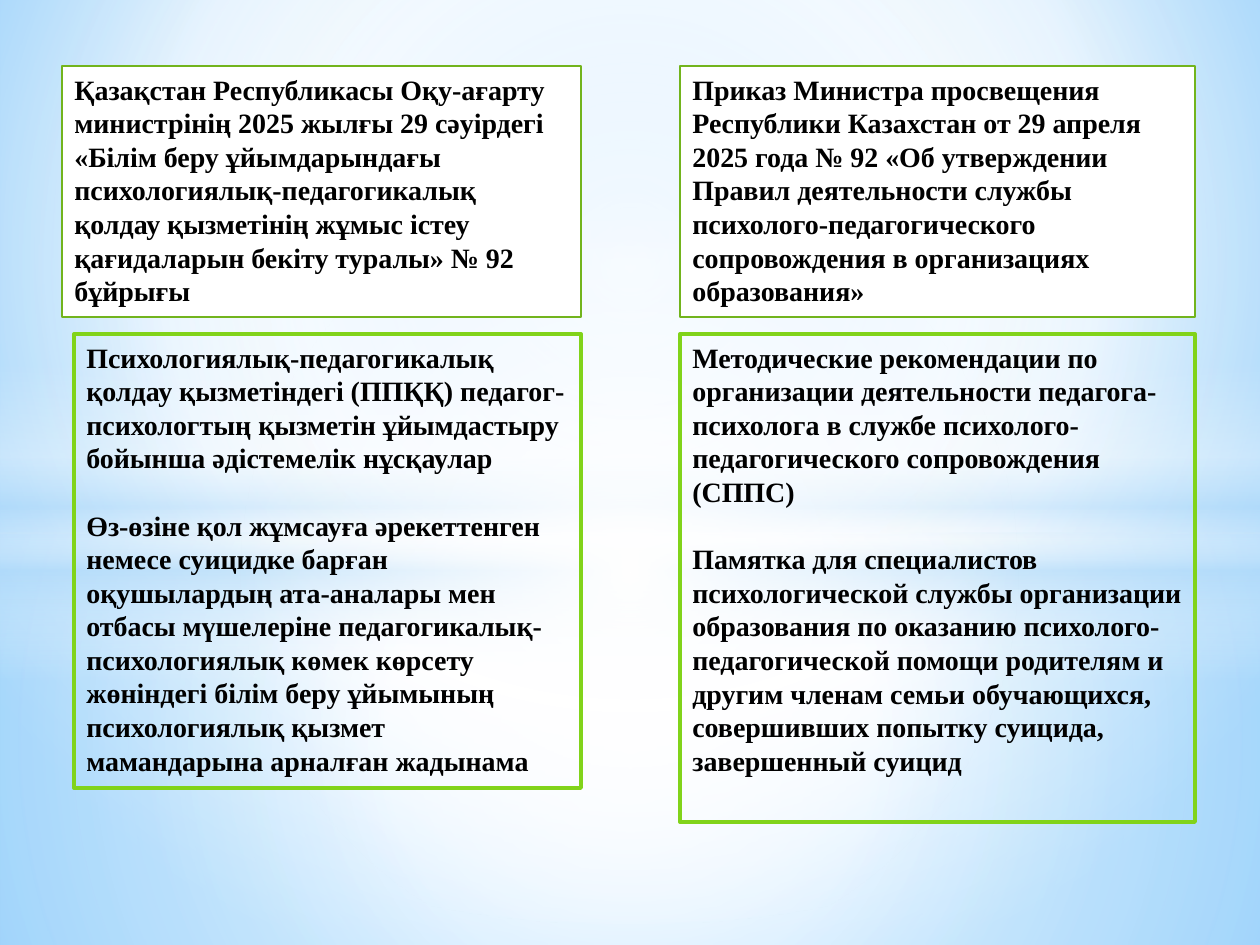
"""Build a bilingual slide of school psychology service regulations and guidance."""
from lxml.etree import SubElement
from pptx import Presentation
from pptx.dml.color import RGBColor
from pptx.enum.shapes import MSO_SHAPE
from pptx.enum.text import MSO_ANCHOR, MSO_AUTO_SIZE, PP_ALIGN
from pptx.oxml.ns import qn
from pptx.util import Emu, Pt

WIDTH, HEIGHT = 1260, 945
EMU_PER_PX = 914400 / 126
BLACK = RGBColor(0x00, 0x00, 0x00)
WHITE = RGBColor(0xFF, 0xFF, 0xFF)
SKY = RGBColor(0x9E, 0xD5, 0xFF)
BLUE = RGBColor(0x5B, 0xB9, 0xFF)
HAZE = RGBColor(0xB4, 0xDC, 0xFA)
GREEN = RGBColor(0x72, 0xB4, 0x1D)
LIME = RGBColor(0x81, 0xD3, 0x1A)
CENTRE = (50, 50, 50, 50)

ORDER_KK = (
    "Қазақстан Республикасы Оқу-ағарту министрінің 2025 жылғы 29 сәуірдегі "
    "«Білім беру ұйымдарындағы психологиялық-педагогикалық қолдау қызметінің "
    "жұмыс істеу қағидаларын бекіту туралы» № 92 бұйрығы",
)
ORDER_RU = (
    "Приказ Министра просвещения Республики Казахстан от 29 апреля 2025 года "
    "№ 92 «Об утверждении Правил деятельности службы психолого-педагогического "
    "сопровождения в организациях образования»",
)
GUIDANCE_KK = (
    "Психологиялық-педагогикалық қолдау қызметіндегі (ППҚҚ) педагог-психологтың "
    "қызметін ұйымдастыру бойынша әдістемелік нұсқаулар",
    "Өз-өзіне қол жұмсауға әрекеттенген немесе суицидке барған оқушылардың "
    "ата-аналары мен отбасы мүшелеріне педагогикалық-психологиялық көмек көрсету "
    "жөніндегі білім беру ұйымының психологиялық қызмет мамандарына арналған жадынама",
)
GUIDANCE_RU = (
    "Методические рекомендации по организации деятельности педагога-психолога "
    "в службе психолого-педагогического сопровождения (СППС)",
    "Памятка для специалистов психологической службы организации образования "
    "по оказанию психолого-педагогической помощи родителям и другим членам семьи "
    "обучающихся, совершивших попытку суицида, завершенный суицид",
)


def px(length):
    """Turn pixels into EMU."""
    return Emu(round(length * EMU_PER_PX))


def write_text(frame, paragraphs, *, font="Times New Roman", size=16, color=BLACK,
               bold=True, gap=19.2):
    """Fill a text frame with evenly separated paragraphs."""
    frame.word_wrap = True
    frame.auto_size = MSO_AUTO_SIZE.NONE
    frame.vertical_anchor = MSO_ANCHOR.TOP
    for index, words in enumerate(paragraphs):
        paragraph = frame.add_paragraph() if index else frame.paragraphs[0]
        paragraph.alignment = PP_ALIGN.LEFT
        paragraph.space_before = Pt(gap if index else 0)
        run = paragraph.add_run()
        run.text = words
        run.font.name = font
        run.font.size = Pt(size)
        run.font.bold = bold
        run.font.color.rgb = color


def set_gradient(fill, owner, stops, *, focus=None, angle=90):
    """Apply (position, colour, opacity) stops, radial when a focus is given."""
    fill.gradient()
    gradient = next(owner.iter(qn("a:gradFill")))
    for child in list(gradient):
        gradient.remove(child)
    stop_list = SubElement(gradient, qn("a:gsLst"))
    for position, color, opacity in stops:
        stop = SubElement(stop_list, qn("a:gs"), pos=str(position * 1000))
        tint = SubElement(stop, qn("a:srgbClr"), val=str(color))
        if opacity < 100:
            SubElement(tint, qn("a:alpha"), val=str(opacity * 1000))
    if focus:
        radial = SubElement(gradient, qn("a:path"), path="circle")
        edges = {side: str(inset * 1000) for side, inset in zip("ltrb", focus)}
        SubElement(radial, qn("a:fillToRect"), **edges)
    else:
        SubElement(gradient, qn("a:lin"), ang=str(angle * 60000), scaled="0")


class SlidePainter:
    """Hold the current slide and its style."""

    def __init__(self, slide):
        """Start painting on a slide."""
        self.slide = slide

    def backdrop(self, stops, focus):
        """Paint the slide background."""
        set_gradient(self.slide.background.fill, self.slide.element, stops, focus=focus)

    def shape(self, kind, bounds):
        """Add a preset shape without a shadow."""
        shape = self.slide.shapes.add_shape(kind, *map(px, bounds))
        shape.shadow.inherit = False
        return shape

    def glow(self, bounds, stops, *, kind=MSO_SHAPE.RECTANGLE, focus=CENTRE):
        """Add a translucent layer of light."""
        layer = self.shape(kind, bounds)
        layer.line.fill.background()
        set_gradient(layer.fill, layer.element, stops, focus=focus)

    def card(self, bounds, paragraphs, *, border, weight, fill=None):
        """Add a bordered box of text."""
        card = self.shape(MSO_SHAPE.RECTANGLE, bounds)
        if fill is None:
            card.fill.background()
        else:
            card.fill.solid()
            card.fill.fore_color.rgb = fill
        card.line.color.rgb = border
        card.line.width = Pt(weight)
        write_text(card.text_frame, paragraphs)


def main():
    """Build and save the slide."""
    deck = Presentation()
    deck.slide_width, deck.slide_height = px(WIDTH), px(HEIGHT)
    painter = SlidePainter(deck.slides.add_slide(deck.slide_layouts[6]))

    painter.backdrop([(0, SKY, 100), (60, WHITE, 100), (100, BLUE, 100)], (20, 10, 20, 60))
    horizon = 533
    painter.glow((0, horizon, WIDTH, HEIGHT - horizon),
                 [(0, WHITE, 91), (37, WHITE, 76), (100, HAZE, 79)])
    painter.glow((0, 0, WIDTH, horizon),
                 [(0, WHITE, 89), (48, WHITE, 62), (100, HAZE, 79)])
    painter.glow((0, 365, WIDTH, 315),
                 [(0, WHITE, 0), (29, WHITE, 30), (45, HAZE, 40),
                  (55, WHITE, 26), (65, HAZE, 60), (100, WHITE, 0)], focus=None)
    painter.glow((0, 221, WIDTH, 703), [(0, WHITE, 100), (54, WHITE, 0)],
                 kind=MSO_SHAPE.OVAL)

    order_style = {"border": GREEN, "weight": 1.25, "fill": WHITE}
    guidance_style = {"border": LIME, "weight": 2.25}
    painter.card((62, 66, 519, 251), ORDER_KK, **order_style)
    painter.card((680, 66, 515, 251), ORDER_RU, **order_style)
    painter.card((680, 334, 515, 488), GUIDANCE_RU, **guidance_style)
    painter.card((74, 334, 507, 454), GUIDANCE_KK, **guidance_style)

    deck.save("out.pptx")


if __name__ == "__main__":
    main()
